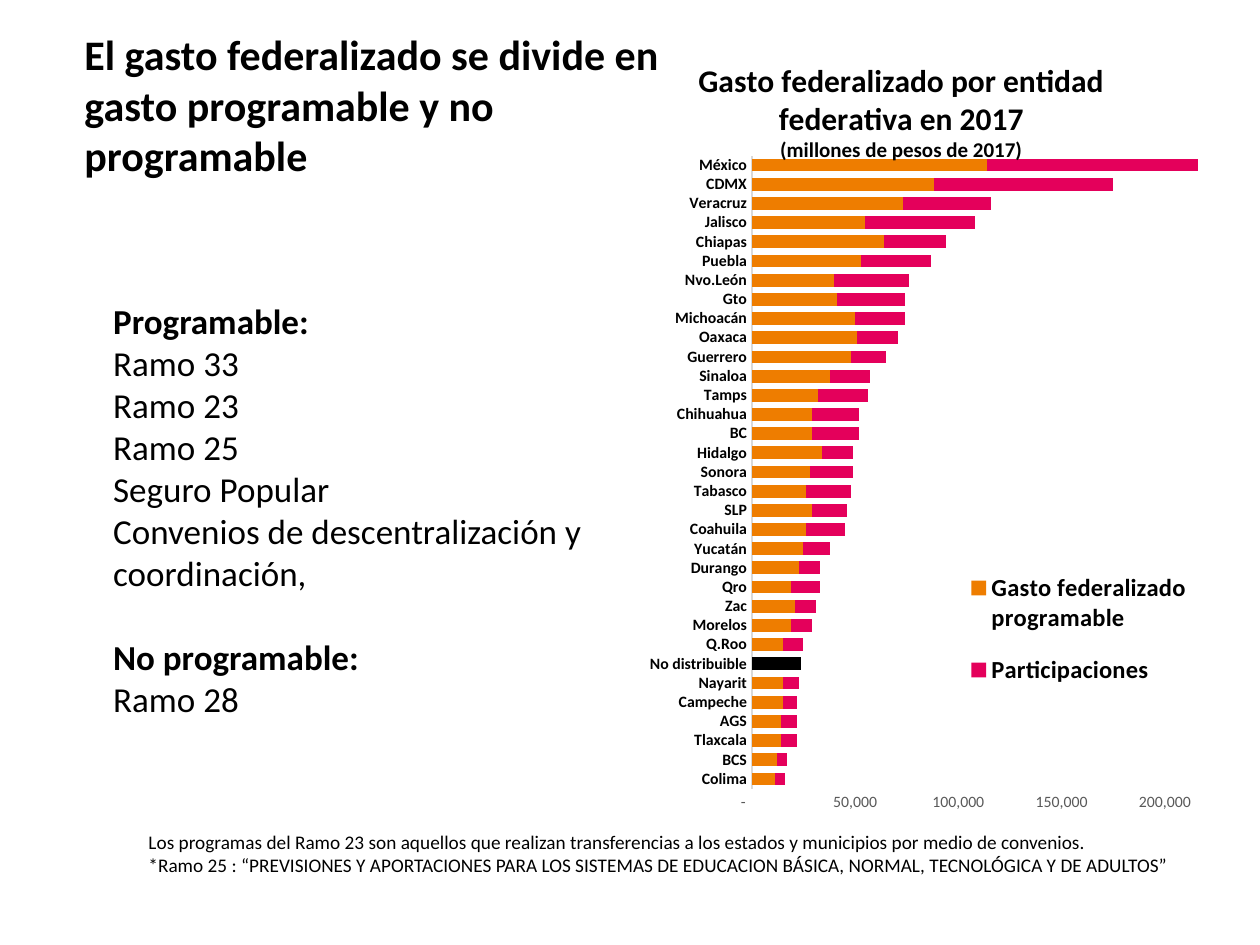
"""Build a slide on federalized spending in Mexico with a stacked bar chart by state."""
from typing import NamedTuple, Optional

from pptx import Presentation
from pptx.chart.data import CategoryChartData
from pptx.dml.color import RGBColor
from pptx.enum import chart as charts, text
from pptx.oxml.xmlchemy import OxmlElement
from pptx.util import Inches, Pt

BLACK = RGBColor(0x00, 0x00, 0x00)
GRAY = RGBColor(0x59, 0x59, 0x59)
LIGHT_GRAY = RGBColor(0xD9, 0xD9, 0xD9)
ORANGE = RGBColor(0xEE, 0x7D, 0x00)
PINK = RGBColor(0xE4, 0x00, 0x5B)
FONT = "Calibri"


class Box(NamedTuple):
    left: float
    top: float
    width: float
    height: float


class Line(NamedTuple):
    text: str
    size: float
    bold: bool = False
    space_before: float = 0


class State(NamedTuple):
    name: str
    programmable: int
    shares: Optional[int]


STATES = [
    State("Colima", 11000, 5000),
    State("BCS", 12000, 5000),
    State("Tlaxcala", 14000, 8000),
    State("AGS", 14000, 8000),
    State("Campeche", 15000, 7000),
    State("Nayarit", 15000, 8000),
    State("No distribuible", 24000, None),
    State("Q.Roo", 15000, 10000),
    State("Morelos", 19000, 10000),
    State("Zac", 21000, 10000),
    State("Qro", 19000, 14000),
    State("Durango", 23000, 10000),
    State("Yucatán", 25000, 13000),
    State("Coahuila", 26000, 19000),
    State("SLP", 29000, 17000),
    State("Tabasco", 26000, 22000),
    State("Sonora", 28000, 21000),
    State("Hidalgo", 34000, 15000),
    State("BC", 29000, 23000),
    State("Chihuahua", 29000, 23000),
    State("Tamps", 32000, 24000),
    State("Sinaloa", 38000, 19000),
    State("Guerrero", 48000, 17000),
    State("Oaxaca", 51000, 20000),
    State("Michoacán", 50000, 24000),
    State("Gto", 41000, 33000),
    State("Nvo.León", 40000, 36000),
    State("Puebla", 53000, 34000),
    State("Chiapas", 64000, 30000),
    State("Jalisco", 55000, 53000),
    State("Veracruz", 73000, 43000),
    State("CDMX", 88000, 87000),
    State("México", 114000, 102000),
]

HEADLINE = [Line("El gasto federalizado se divide en gasto programable y no programable", 24, True)]
BRANCHES = [
    Line("Programable:", 20, True),
    Line("Ramo 33", 20),
    Line("Ramo 23", 20),
    Line("Ramo 25", 20),
    Line("Seguro Popular", 20),
    Line("Convenios de descentralización y coordinación,", 20),
    Line("No programable:", 20, True, 24),
    Line("Ramo 28", 20),
]
FOOTNOTES = [
    Line("Los programas del Ramo 23 son aquellos que realizan transferencias a los estados "
         "y municipios por medio de convenios.", 11),
    Line("*Ramo 25 : “PREVISIONES Y APORTACIONES PARA LOS SISTEMAS DE EDUCACION BÁSICA, "
         "NORMAL, TECNOLÓGICA Y DE ADULTOS”", 11),
]
CHART_TITLE = [
    Line("Gasto federalizado por entidad federativa en 2017", 18, True),
    Line("(millones de pesos de 2017)", 12, True),
]


def inches(box: Box) -> list:
    return [Inches(length) for length in box]


def style(font, size: float, bold: bool = False, color: RGBColor = BLACK) -> None:
    font.name, font.size, font.bold = FONT, Pt(size), bold
    font.color.rgb = color


def write(frame, lines: list[Line], alignment=text.PP_ALIGN.LEFT) -> None:
    for index, line in enumerate(lines):
        paragraph = frame.add_paragraph() if index else frame.paragraphs[0]
        paragraph.text = line.text
        paragraph.alignment = alignment
        if line.space_before:
            paragraph.space_before = Pt(line.space_before)
        style(paragraph.font, line.size, line.bold)


def write_box(shape, lines: list[Line], anchor=text.MSO_ANCHOR.TOP) -> None:
    frame = shape.text_frame
    frame.word_wrap = True
    frame.auto_size = text.MSO_AUTO_SIZE.NONE
    frame.vertical_anchor = anchor
    write(frame, lines)


def set_layout(element, index: int, **values) -> None:
    for old_layout in element.findall(OxmlElement("c:layout").tag):
        element.remove(old_layout)
    layout, manual = OxmlElement("c:layout"), OxmlElement("c:manualLayout")
    for name, value in values.items():
        setting = OxmlElement(f"c:{name}")
        setting.set("val", str(value))
        manual.append(setting)
    layout.append(manual)
    element.insert(index, layout)


def add_spending_chart(slide, box: Box) -> None:
    data = CategoryChartData()
    data.categories = [state.name for state in STATES]
    data.add_series("Gasto federalizado programable", [state.programmable for state in STATES])
    data.add_series("Participaciones", [state.shares for state in STATES])
    chart = slide.shapes.add_chart(charts.XL_CHART_TYPE.BAR_STACKED, *inches(box), data).chart
    style(chart.font, 10)

    plot = chart.plots[0]
    plot.gap_width, plot.overlap, plot.vary_by_categories = 50, 100, False
    for series, color in zip(plot.series, (ORANGE, PINK)):
        series.format.fill.solid()
        series.format.fill.fore_color.rgb = color
    undistributed = [state.name for state in STATES].index("No distribuible")
    fill = plot.series[0].points[undistributed].format.fill
    fill.solid()
    fill.fore_color.rgb = BLACK

    states, amounts = chart.category_axis, chart.value_axis
    for axis in (states, amounts):
        axis.has_major_gridlines = False
        axis.major_tick_mark = axis.minor_tick_mark = charts.XL_TICK_MARK.NONE
    style(states.tick_labels.font, 9, True)
    states.format.line.color.rgb = LIGHT_GRAY
    states.format.line.width = Pt(0.75)
    style(amounts.tick_labels.font, 9, color=GRAY)
    amounts.format.line.fill.background()
    amounts.minimum_scale, amounts.maximum_scale, amounts.major_unit = 0, 220000, 50000
    amounts.tick_labels.number_format = '_-* #,##0_-;\\-* #,##0_-;_-* "-"??_-;_-@_'
    amounts.tick_labels.number_format_is_linked = False

    chart.has_title = True
    write(chart.chart_title.text_frame, CHART_TITLE, text.PP_ALIGN.CENTER)
    chart.has_legend = True
    chart.legend.position = charts.XL_LEGEND_POSITION.BOTTOM
    chart.legend.include_in_layout = False
    style(chart.legend.font, 14, True)

    chart_element = chart.plots[0]._element.getparent().getparent()
    set_layout(chart_element.title, 1, xMode="edge", yMode="edge", x=0.18, y=0.01)
    set_layout(chart_element.plotArea, 0, layoutTarget="inner", xMode="edge", yMode="edge",
               x=0.265, y=0.139, w=0.674, h=0.817)
    set_layout(chart.legend._element, 1, xMode="edge", yMode="edge",
               x=0.54, y=0.65, w=0.42, h=0.2)


def main() -> None:
    presentation = Presentation()
    presentation.slide_width, presentation.slide_height = Inches(10), Inches(7.5)
    slide = presentation.slides.add_slide(presentation.slide_layouts[5])

    title = slide.shapes.title
    title.left, title.top, title.width, title.height = inches(Box(0.57, 0.18, 5, 1.31))
    write_box(title, HEADLINE)
    branches = slide.shapes.add_textbox(*inches(Box(0.8, 1.96, 4.06, 3.8)))
    write_box(branches, BRANCHES, text.MSO_ANCHOR.BOTTOM)
    add_spending_chart(slide, Box(4.55, 0.38, 5.35, 6.15))
    footnotes = slide.shapes.add_textbox(*inches(Box(1.08, 6.54, 9.29, 0.47)))
    write_box(footnotes, FOOTNOTES)

    presentation.save("out.pptx")


if __name__ == "__main__":
    main()
